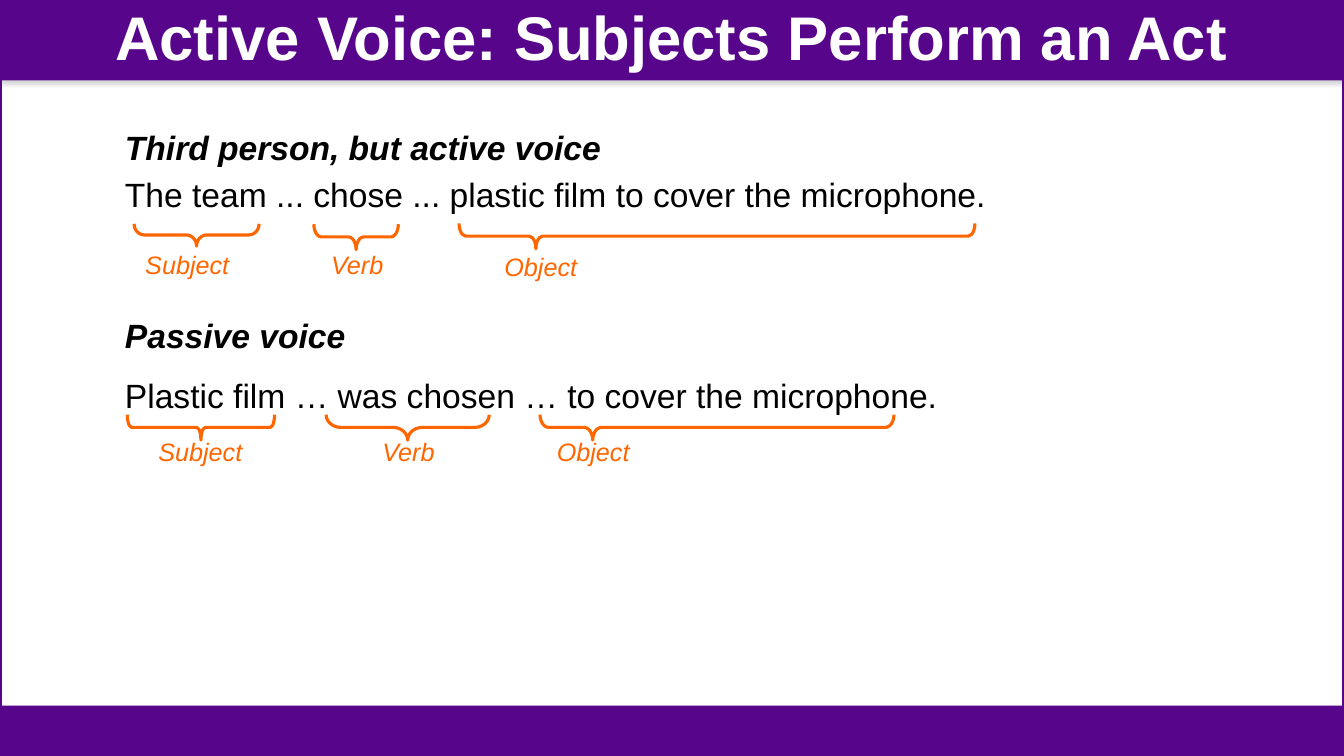
"""Build the slide that compares active and passive voice."""
from lxml.etree import SubElement as Sub
from pptx import Presentation
from pptx.dml.color import RGBColor as Rgb
from pptx.enum.shapes import MSO_SHAPE as Kind
from pptx.enum.text import MSO_ANCHOR as Anchor, MSO_AUTO_SIZE as Fit, PP_ALIGN as Align
from pptx.oxml.ns import qn
from pptx.util import Cm, Pt

PURPLE, ORANGE = "57068C", "FF6600"
WIDE, HIGH = 33.87, 19.05


def hue(code):
    """Turn a hex string into a colour."""
    return Rgb.from_string(code)


def write(frame, text, look, align=Align.LEFT, space=None):
    """Fill a text frame with one formatted paragraph."""
    para = frame.paragraphs[0]
    para.text = text
    para.alignment = align
    para.line_spacing = space
    font = para.runs[0].font
    for name, value in look.items():
        if name == "color":
            font.color.rgb = hue(value)
        else:
            setattr(font, name, value)


deck = Presentation()
deck.slide_width, deck.slide_height = Cm(WIDE), Cm(HIGH)
slide = deck.slides.add_slide(deck.slide_layouts[5])
shapes = slide.shapes

for top, high, solid in [(0, 2.03, True), (0, HIGH, False), (17.78, 1.27, True)]:
    rect = shapes.add_shape(Kind.RECTANGLE, 0, Cm(top), Cm(WIDE), Cm(high))
    rect.shadow.inherit = False
    if solid:
        rect.fill.solid()
        rect.fill.fore_color.rgb = hue(PURPLE)
        rect.line.fill.background()
        effect = rect._element.spPr.find(qn("a:effectLst"))
        shade = Sub(effect, qn("a:outerShdw"), blurRad=str(Pt(3.1)),
                    dist=str(Pt(1.8)), dir="5400000", rotWithShape="0")
        tint = Sub(shade, qn("a:srgbClr"), val="808080")
        Sub(tint, qn("a:alpha"), val="35000")
    else:
        rect.fill.background()
        rect.line.color.rgb = hue(PURPLE)
        rect.line.width = Pt(2.25)

title = shapes.title
shapes._spTree.append(title._element)
title.left, title.top, title.width, title.height = 0, 0, Cm(WIDE), Cm(2.03)
title.text_frame.vertical_anchor = Anchor.MIDDLE
title.text_frame.auto_size = Fit.NONE
write(title.text_frame, "Active Voice: Subjects Perform an Act",
      dict(name="Arial", size=Pt(44), bold=True, color="FFFFFF"), Align.CENTER, 0.9)

plain = dict(name="Arial", size=Pt(24), color="000000")
head = dict(plain, bold=True, italic=True)
label = dict(name="Arial", size=Pt(18), italic=True, color=ORANGE)

lines = [
    ("Third person, but active voice", 3.07, 12.62, 1.27, head, None),
    ("The team ... chose ... plastic film to cover the microphone.", 4.39, 22.23, 1.14, plain, 0.85),
    ("Passive voice", 7.8, 6.12, 1.27, head, None),
    ("Plastic film … was chosen … to cover the microphone.", 9.32, 22.86, 1.02, plain, None),
]
for text, top, wide, high, look, space in lines:
    box = shapes.add_textbox(Cm(2.9), Cm(top), Cm(wide), Cm(high))
    box.text_frame.word_wrap = look is plain
    if space:
        box.text_frame.vertical_anchor = Anchor.MIDDLE
    write(box.text_frame, text, look, space=space)

sizes = {"Subject": 2.64, "Verb": 1.85, "Object": 2.36}
parts = [
    ("Subject", 3.4, 6.15, 3.38, 5.64, 3.15, 0.56, 0.457, 0.5),
    ("Verb", 8.08, 6.17, 7.91, 5.65, 2.13, 0.64, 0.299, 0.5),
    ("Object", 12.45, 6.2, 11.57, 5.63, 13, 0.64, 0.264, 0.149),
    ("Subject", 3.73, 10.87, 3.21, 10.45, 3.71, 0.64, 0.17, 0.5),
    ("Verb", 9.37, 10.87, 8.22, 10.45, 4.11, 0.64, 0.572, 0.5),
    ("Object", 13.77, 10.87, 13.61, 10.45, 8.92, 0.64, 0.34, 0.149),
]
for text, left, top, start, edge, span, deep, bend, tip in parts:
    shift = (span - deep) / 2
    brace = shapes.add_shape(Kind.LEFT_BRACE, Cm(start + shift), Cm(edge - shift), Cm(deep), Cm(span))
    brace.rotation = 270
    brace.adjustments[0], brace.adjustments[1] = bend, tip
    brace.shadow.inherit = False
    brace.fill.background()
    brace.line.color.rgb = hue(ORANGE)
    brace.line.width = Pt(2.25)
    box = shapes.add_textbox(Cm(left), Cm(top), Cm(sizes[text]), Cm(1.02))
    box.text_frame.word_wrap = False
    write(box.text_frame, text, label, Align.CENTER)

deck.save("out.pptx")
